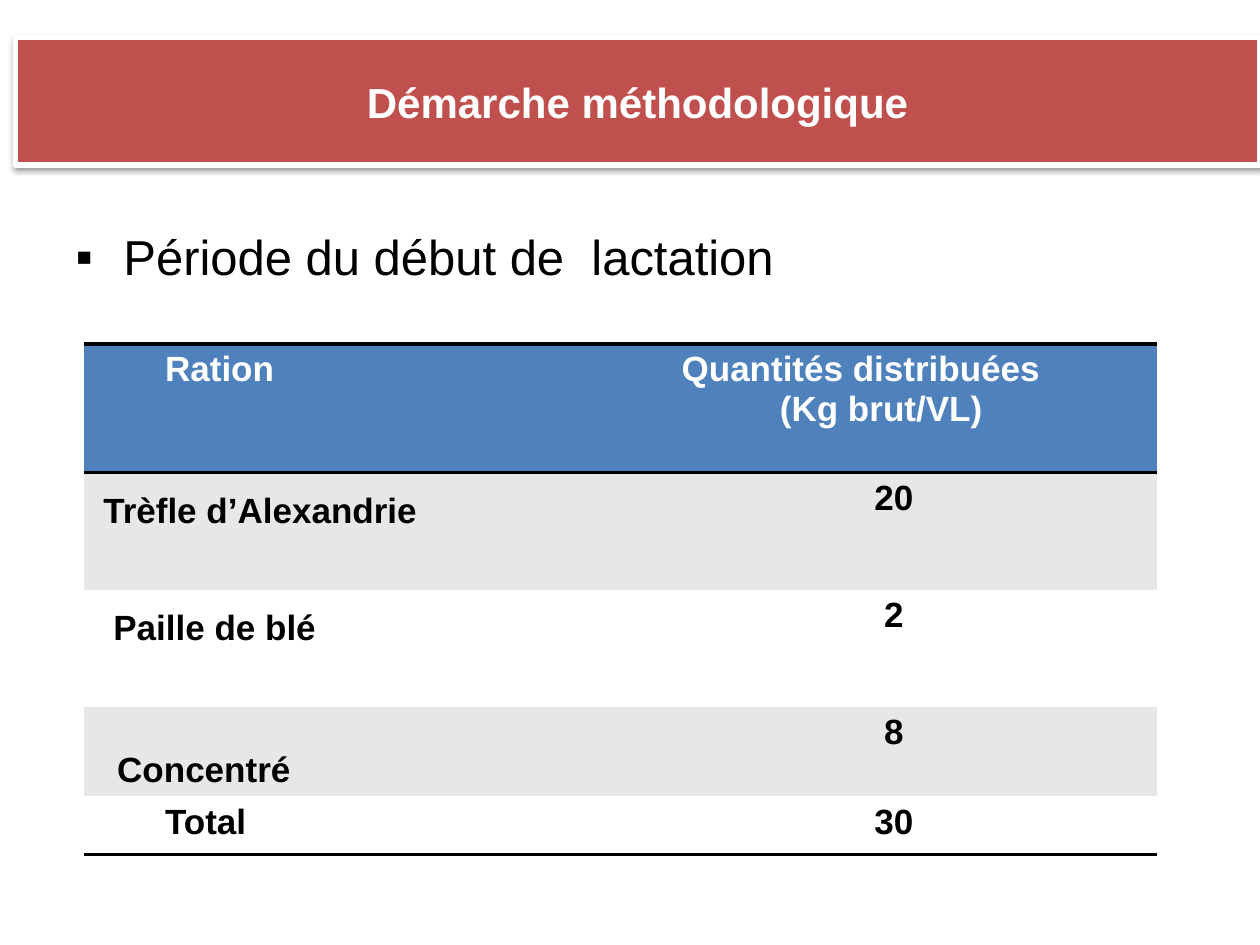
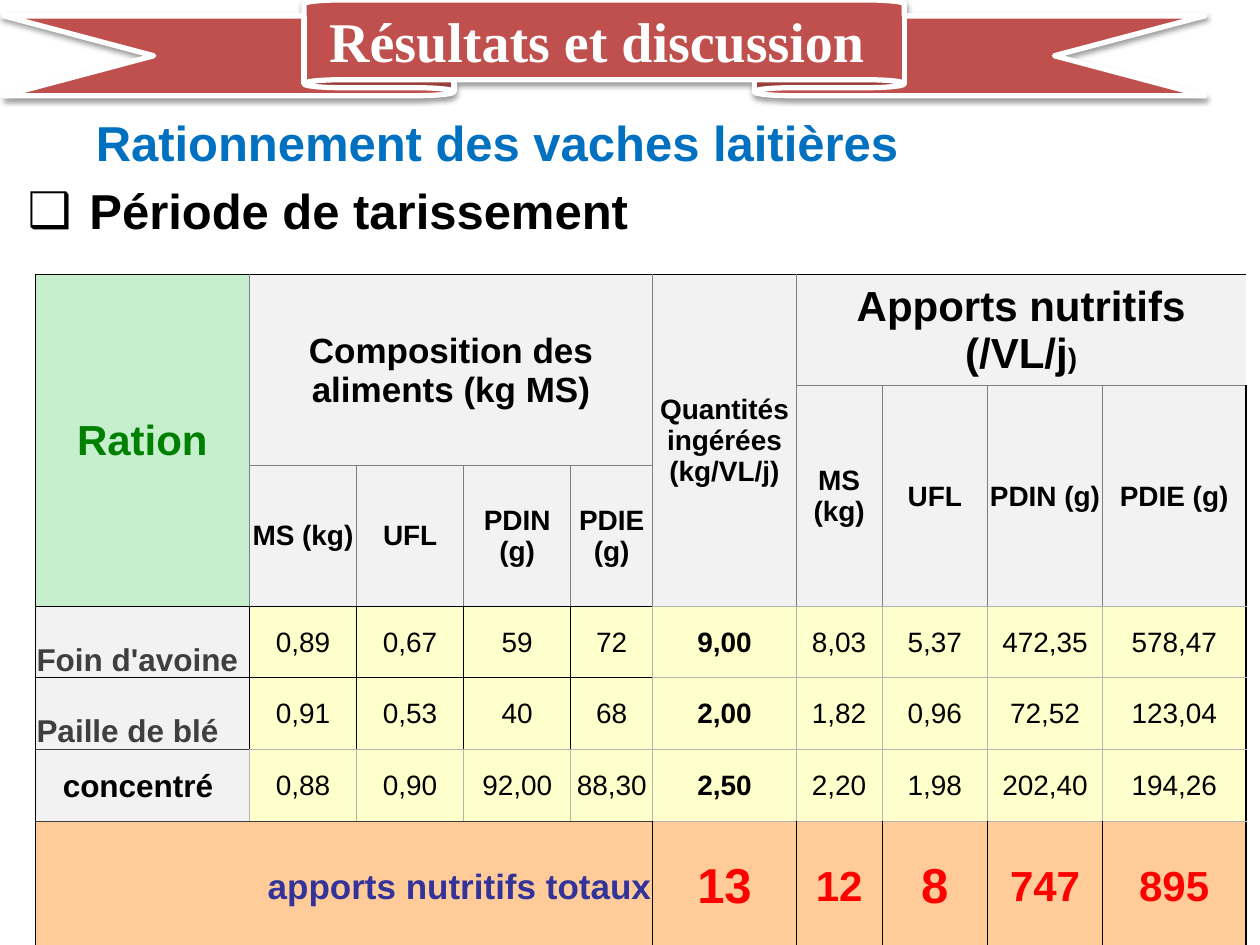
import pptx
import pptx.util
import pptx.dml.color
import pptx.enum.shapes
import pptx.enum.text
import pptx.oxml.ns
import lxml.etree

Inches, Pt = pptx.util.Inches, pptx.util.Pt
ALIGN = pptx.enum.text.PP_ALIGN
ANCHOR = pptx.enum.text.MSO_ANCHOR

# Shared look
WIDTH, HEIGHT = 10, 7.5
FONT, BANNER_FONT = "Arial", "Times New Roman"
BLACK, WHITE, BANNER_RED, HEADING_BLUE = "000000", "FFFFFF", "C0504D", "0070C0"
HEADER_BLUE, BAND_GREY = "4F81BD", "E7E7E7"
GREEN_TEXT, GREEN_FILL = "008000", "C6EFCE"
HEADER_GREY, DATA_YELLOW, TOTAL_ORANGE = "F2F2F2", "FFFFCC", "FFCC99"
TOTAL_BLUE, TOTAL_RED, LABEL_GREY = "333399", "FF0000", "3F3F3F"
GRID_GREY, HEADER_LINE = "B2B2B2", "7F7F7F"
NO_TABLE_STYLE = "{2D5ABB26-0587-4C30-8999-92F81FD0307C}"


def color(value):
    return pptx.dml.color.RGBColor.from_string(value)


def add_xml(parent, tag, position=None, **attributes):
    element = lxml.etree.Element(pptx.oxml.ns.qn(tag))
    for name, value in attributes.items():
        element.set(name, str(value))
    parent.insert(len(parent) if position is None else position, element)
    return element


def place(shape, left, top, width, height):
    shape.left, shape.top = Inches(left), Inches(top)
    shape.width, shape.height = Inches(width), Inches(height)


def fill_solid(target, value):
    target.fill.solid()
    target.fill.fore_color.rgb = color(value)


def format_run(run, size, text_color, bold=True, font=FONT):
    run.font.name, run.font.size, run.font.bold = font, Pt(size), bold
    run.font.color.rgb = color(text_color)


def indent(paragraph, left, hanging=0):
    properties = paragraph._p.get_or_add_pPr()
    properties.set("marL", str(Inches(left)))
    properties.set("indent", str(-Inches(hanging)))
    return properties


def style_banner(shape, text, size, font):
    """Red banner with a white outline and a soft shadow."""
    fill_solid(shape, BANNER_RED)
    shape.line.color.rgb = color(WHITE)
    shape.line.width = Pt(3)
    shape.shadow.inherit = False
    effects = shape._element.spPr.find(pptx.oxml.ns.qn("a:effectLst"))
    shadow = add_xml(effects, "a:outerShdw", blurRad=Pt(3.1), dist=Pt(1.6),
                     dir=5400000, rotWithShape=0)
    shadow_color = add_xml(shadow, "a:srgbClr", val=BLACK)
    add_xml(shadow_color, "a:alpha", val=38000)
    frame = shape.text_frame
    frame.text = text
    frame.vertical_anchor = ANCHOR.MIDDLE
    frame.paragraphs[0].alignment = ALIGN.CENTER
    format_run(frame.paragraphs[0].runs[0], size, WHITE, font=font)


def fill_body(body, lines):
    """Each line is text, bullet, left indent, colour, bold."""
    frame = body.text_frame
    frame.text = "\n".join(line[0] for line in lines)
    for paragraph, (_, bullet, left, text_color, bold) in zip(frame.paragraphs, lines):
        properties = indent(paragraph, left, left if bullet else 0)
        if bullet:
            add_xml(properties, "a:buChar", char=bullet)
        else:
            add_xml(properties, "a:buNone")
        format_run(paragraph.runs[0], 28, text_color, bold)


def add_plain_table(slide, left, top, columns, rows):
    frame = slide.shapes.add_table(len(rows), len(columns), Inches(left), Inches(top),
                                   Inches(sum(columns)), Inches(sum(rows)))
    table = frame.table
    table.first_row = table.horz_banding = False
    table._tbl.tblPr.find(pptx.oxml.ns.qn("a:tableStyleId")).text = NO_TABLE_STYLE
    for column, width in zip(table.columns, columns):
        column.width = Inches(width)
    for row, height in zip(table.rows, rows):
        row.height = Inches(height)
    return table


def set_margins(cell, left, top, right, bottom):
    cell.margin_left, cell.margin_top = Inches(left), Inches(top)
    cell.margin_right, cell.margin_bottom = Inches(right), Inches(bottom)


def write_cell(cell, text, size, text_color, fill, bold=True,
               align=ALIGN.CENTER, anchor=ANCHOR.MIDDLE):
    cell.text_frame.text = text
    cell.vertical_anchor = anchor
    fill_solid(cell, fill)
    for paragraph in cell.text_frame.paragraphs:
        paragraph.alignment = align
        for run in paragraph.runs:
            format_run(run, size, text_color, bold)


def draw_borders(cell, **edges):
    """Edges are given in the order L, R, T, B as (colour, points)."""
    for position, (side, (line_color, points)) in enumerate(edges.items()):
        line = add_xml(cell._tc.get_or_add_tcPr(), "a:ln" + side, position, w=Pt(points))
        add_xml(add_xml(line, "a:solidFill"), "a:srgbClr", val=line_color)


# Slide 1: quantities distributed
def add_quantities_table(slide):
    rows = [  # label, its indent, quantity, fill
        ("Ration", 0.54, "Quantités distribuées\n(Kg brut/VL)", HEADER_BLUE),
        ("Trèfle d’Alexandrie", 0.08, "20", BAND_GREY),
        ("Paille de blé", 0.16, "2", WHITE),
        ("Concentré", 0.16, "8", BAND_GREY),
        ("Total", 0.54, "30", WHITE),
    ]
    table = add_plain_table(slide, 0.67, 2.73, [4.34, 4.17], [1.02, 0.93, 0.93, 0.71, 0.46])
    for index, (label, left, quantity, fill) in enumerate(rows):
        label_cell, quantity_cell = table.cell(index, 0), table.cell(index, 1)
        header = index == 0
        text_color = WHITE if header else BLACK
        anchor = ANCHOR.BOTTOM if label == "Concentré" else ANCHOR.TOP
        write_cell(label_cell, label, 20, text_color, fill, align=ALIGN.LEFT, anchor=anchor)
        write_cell(quantity_cell, quantity, 20, text_color, fill, anchor=ANCHOR.TOP,
                   align=ALIGN.LEFT if header else ALIGN.CENTER)
        indent(label_cell.text_frame.paragraphs[0], left)
        if index in (1, 2):
            set_margins(label_cell, 0.07, 0, 0.07, 0)
            label_cell.text_frame.paragraphs[0].line_spacing = 1.5
        for cell in (label_cell, quantity_cell):
            if header:
                draw_borders(cell, T=(BLACK, 2), B=(BLACK, 2))
            elif label == "Total":
                draw_borders(cell, B=(BLACK, 2))
    for paragraph, left in zip(table.cell(0, 1).text_frame.paragraphs, (0.3, 1.08)):
        indent(paragraph, left)


# Slide 2: nutrient supply
def horizontal_line(line, column):
    """Border on the given row line, above the cell of that row."""
    if line == 0:
        return BLACK, 1
    if line < 3:
        return HEADER_LINE, 0.5
    if line < 5:
        return (BLACK if column < 5 else GRID_GREY), 0.5
    if line == 7:
        return BLACK, 0.5
    dark_columns = 1 if line == 5 else 5
    return (LABEL_GREY if column < dark_columns else GRID_GREY), 0.5


def vertical_line(row, line):
    """Border on the given column line, left of the cell of that column."""
    if line in (0, 10):
        return BLACK, 1
    if row < 3:
        return HEADER_LINE, 0.5
    dark = row == 6 or (row < 5 and line < 5)
    return (BLACK if dark else GRID_GREY), 0.5


def add_supply_table(slide):
    table = add_plain_table(
        slide, 0.28, 2.18,
        [1.7, 0.85, 0.85, 0.85, 0.65, 1.14, 0.68, 0.84, 0.91, 1.14],
        [0.88, 0.63, 1.12, 0.57, 0.57, 0.57, 1.03])
    units = ["MS (kg)", "UFL", "PDIN (g)", "PDIE (g)"]
    blocks = [  # first row, first column, last row, last column, text, size
        (0, 0, 2, 0, "Ration", 24),
        (0, 1, 1, 4, "Composition des aliments (kg MS)", 20),
        (0, 5, 2, 5, "Quantités ingérées (kg/VL/j)", 16),
        (0, 6, 0, 9, "Apports nutritifs (/VL/j", 24),
    ]
    for index, unit in enumerate(units):
        blocks.append((2, 1 + index, 2, 1 + index, unit, 16))
        blocks.append((1, 6 + index, 2, 6 + index, unit, 16))
    blocks.append((6, 0, 6, 4, "apports nutritifs totaux", 20))
    feeds = [
        ["Foin d'avoine", "0,89", "0,67", "59", "72", "9,00", "8,03", "5,37", "472,35", "578,47"],
        ["Paille de blé", "0,91", "0,53", "40", "68", "2,00", "1,82", "0,96", "72,52", "123,04"],
        ["concentré ", "0,88", "0,90", "92,00", "88,30", "2,50", "2,20", "1,98", "202,40", "194,26"],
    ]
    totals = [("13", 28), ("12", 24), ("8", 28), ("747", 24), ("895", 24)]

    # Headers and merged cells
    for top, left, bottom, right, text, size in blocks:
        cell = table.cell(top, left)
        if (top, left) != (bottom, right):
            cell.merge(table.cell(bottom, right))
        write_cell(cell, text, size, BLACK, HEADER_GREY)
    write_cell(table.cell(0, 0), "Ration", 24, GREEN_TEXT, GREEN_FILL)
    write_cell(table.cell(6, 0), "apports nutritifs totaux", 20, TOTAL_BLUE, TOTAL_ORANGE,
               align=ALIGN.RIGHT)
    closing = table.cell(0, 6).text_frame.paragraphs[0].add_run()
    closing.text = ")"
    format_run(closing, 16, BLACK)

    # Feeds and totals
    for row, (label, *values) in enumerate(feeds, 3):
        if row < 5:
            write_cell(table.cell(row, 0), label, 18, LABEL_GREY, HEADER_GREY,
                       align=ALIGN.LEFT, anchor=ANCHOR.BOTTOM)
        else:
            write_cell(table.cell(row, 0), label, 18, BLACK, HEADER_GREY)
        for column, value in enumerate(values, 1):
            write_cell(table.cell(row, column), value, 16, BLACK, DATA_YELLOW, bold=column == 5)
    for column, (value, size) in enumerate(totals, 5):
        write_cell(table.cell(6, column), value, size, TOTAL_RED, TOTAL_ORANGE)

    # Margins, and borders on the outer edges of each block
    areas = {(row, column): block[:4] for block in blocks
             for row in range(block[0], block[2] + 1)
             for column in range(block[1], block[3] + 1)}
    for row in range(7):
        for column in range(10):
            cell = table.cell(row, column)
            top, left, bottom, right = areas.get((row, column), (row, column, row, column))
            set_margins(cell, 0.01, 0.01, 0.01, 0)
            edges = {}
            if column == left:
                edges["L"] = vertical_line(row, column)
            if column == right:
                edges["R"] = vertical_line(row, column + 1)
            if row == top:
                edges["T"] = horizontal_line(row, column)
            if row == bottom:
                edges["B"] = horizontal_line(row + 1, column)
            draw_borders(cell, **edges)


def add_method_slide(presentation):
    slide = presentation.slides.add_slide(presentation.slide_layouts[1])
    title, body = slide.placeholders
    place(title, 0.12, 0.3, WIDTH - 0.12, 1.01)
    style_banner(title, "Démarche méthodologique", 24, FONT)
    place(body, 0.5, 1.75, WIDTH - 1, 4.95)
    fill_body(body, [("Période du début de  lactation", "▪", 0.38, BLACK, False)])
    add_quantities_table(slide)


def add_results_slide(presentation):
    slide = presentation.slides.add_slide(presentation.slide_layouts[1])
    title, body = slide.placeholders
    title._element.getparent().remove(title._element)
    place(body, 0.12, 0.84, WIDTH - 0.12, HEIGHT - 0.84)
    fill_body(body, [
        ("Rationnement des vaches laitières", None, 0.54, HEADING_BLUE, True),
        ("Période de tarissement", "❑", 0.49, BLACK, True),
    ])
    ribbon = slide.shapes.add_shape(pptx.enum.shapes.MSO_SHAPE.UP_RIBBON,
                                    Inches(0.03), 0, Inches(9.53), Inches(0.76))
    style_banner(ribbon, "Résultats et discussion ", 32, BANNER_FONT)
    add_supply_table(slide)


def main():
    presentation = pptx.Presentation()
    presentation.slide_width, presentation.slide_height = Inches(WIDTH), Inches(HEIGHT)
    add_method_slide(presentation)
    add_results_slide(presentation)
    presentation.save("out.pptx")


if __name__ == "__main__":
    main()
